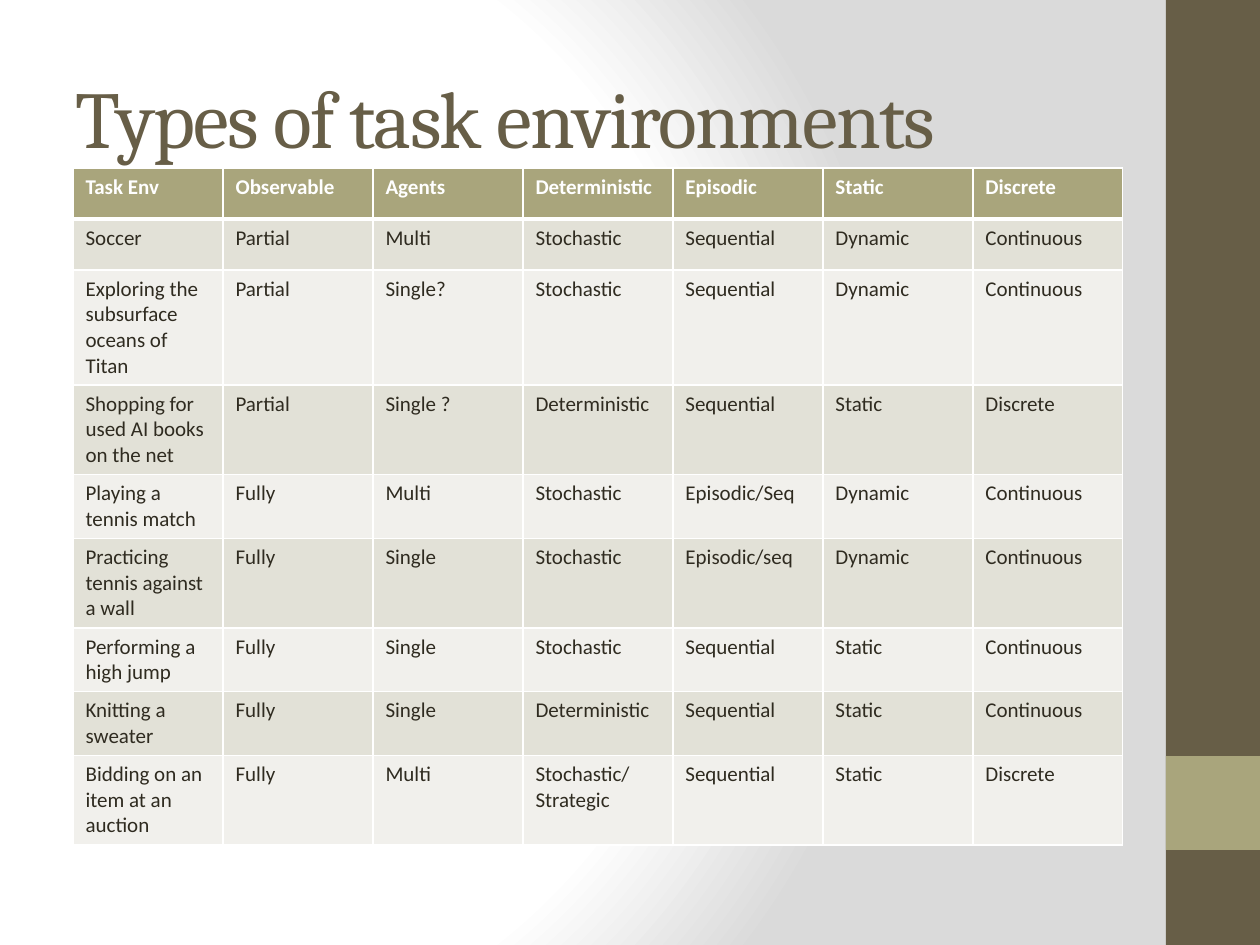
from dataclasses import dataclass

from lxml.etree import SubElement
from pptx import Presentation
from pptx.dml.color import RGBColor
from pptx.enum.shapes import MSO_SHAPE
from pptx.enum.text import MSO_ANCHOR, MSO_AUTO_SIZE, PP_ALIGN
from pptx.oxml import parse_xml
from pptx.oxml.ns import nsdecls, qn
from pptx.util import Pt

TITLE = "Types of task environments"
HEADER = ("Task Env", "Observable", "Agents", "Deterministic", "Episodic", "Static", "Discrete")
ENVIRONMENTS = [
    ("Soccer", "Partial", "Multi", "Stochastic", "Sequential", "Dynamic", "Continuous"),
    ("Exploring the subsurface oceans of Titan", "Partial", "Single?", "Stochastic",
     "Sequential", "Dynamic", "Continuous"),
    ("Shopping for used AI books on the net", "Partial", "Single ?", "Deterministic",
     "Sequential", "Static", "Discrete"),
    ("Playing a tennis match", "Fully", "Multi", "Stochastic", "Episodic/Seq", "Dynamic",
     "Continuous"),
    ("Practicing tennis against a wall", "Fully", "Single", "Stochastic", "Episodic/seq",
     "Dynamic", "Continuous"),
    ("Performing a high jump", "Fully", "Single", "Stochastic", "Sequential", "Static",
     "Continuous"),
    ("Knitting a sweater", "Fully", "Single", "Deterministic", "Sequential", "Static",
     "Continuous"),
    ("Bidding on an item at an auction", "Fully", "Multi", "Stochastic/\nStrategic",
     "Sequential", "Static", "Discrete"),
]

PX = 914400 // 126
SLIDE_SIZE = (1260, 945)
TITLE_BOX = (63, 38, 1050, 157)
TABLE_ORIGIN = (73, 168)
COLUMN_WIDTH, ROW_HEIGHT = 150, 51
SIDEBAR_LEFT, SIDEBAR_WIDTH, ACCENT_TOP = 1166, 94, 756


@dataclass(frozen=True)
class Theme:
    brown: str = "675E47"
    olive: str = "A9A57C"
    ink: str = "2F2B20"
    white: str = "FFFFFF"
    grey: str = "DADADA"
    bands: tuple = ("E2E1D7", "F1F0EC")
    heading_font: str = "Cambria"
    body_font: str = "Calibri"
    title_size: int = 46
    table_size: int = 12
    thin: int = 1
    thick: int = 3


THEME = Theme()


def emu(*lengths):
    return [length * PX for length in lengths]


def write(frame, text, *, size, color, font, bold=False, spacing=None):
    frame.text = text
    for paragraph in frame.paragraphs:
        paragraph.alignment = PP_ALIGN.LEFT
        for run in paragraph.runs:
            run.font.size = Pt(size)
            run.font.name = font
            run.font.bold = bold
            run.font.color.rgb = RGBColor.from_string(color)
            if spacing is not None:
                run.font._element.set("spc", str(spacing * 100))


def paint_background(slide):
    stops = "".join(
        f'<a:gs pos="{position * 1000}"><a:srgbClr val="{color}"/></a:gs>'
        for position, color in ((0, THEME.white), (75, THEME.white), (100, THEME.grey))
    )
    slide.element.cSld.insert(0, parse_xml(
        f'<p:bg {nsdecls("p", "a")}><p:bgPr><a:gradFill rotWithShape="1">'
        f'<a:gsLst>{stops}</a:gsLst><a:path path="circle">'
        '<a:fillToRect l="20000" t="50000" r="100000" b="50000"/></a:path>'
        '</a:gradFill><a:effectLst/></p:bgPr></p:bg>'
    ))


def add_bar(slide, top, height, color):
    bar = slide.shapes.add_shape(
        MSO_SHAPE.RECTANGLE, *emu(SIDEBAR_LEFT, top, SIDEBAR_WIDTH, height))
    bar.shadow.inherit = False
    bar.fill.solid()
    bar.fill.fore_color.rgb = RGBColor.from_string(color)
    bar.line.fill.background()
    slide.shapes._spTree.insert_element_before(bar._element, "p:sp")


def set_borders(cell, top, bottom):
    properties = cell._tc.get_or_add_tcPr()
    widths = {"lnL": THEME.thin, "lnR": THEME.thin, "lnT": top, "lnB": bottom}
    for side, width in widths.items():
        border = SubElement(properties, qn(f"a:{side}"), w=str(Pt(width)))
        solid = SubElement(border, qn("a:solidFill"))
        SubElement(solid, qn("a:srgbClr"), val=THEME.white)


def add_environment_table(slide):
    rows = [HEADER, *ENVIRONMENTS]
    size = (COLUMN_WIDTH * len(HEADER), ROW_HEIGHT * len(rows))
    table = slide.shapes.add_table(
        len(rows), len(HEADER), *emu(*TABLE_ORIGIN, *size)).table
    for column in table.columns:
        column.width = COLUMN_WIDTH * PX
    for row_index, values in enumerate(rows):
        table.rows[row_index].height = ROW_HEIGHT * PX
        heading = row_index == 0
        fill = THEME.olive if heading else THEME.bands[(row_index - 1) % 2]
        for column_index, value in enumerate(values):
            cell = table.cell(row_index, column_index)
            set_borders(cell, THEME.thick if row_index == 1 else THEME.thin,
                        THEME.thick if heading else THEME.thin)
            cell.fill.solid()
            cell.fill.fore_color.rgb = RGBColor.from_string(fill)
            write(cell.text_frame, value, size=THEME.table_size, font=THEME.body_font,
                  color=THEME.white if heading else THEME.ink, bold=heading)


def main():
    presentation = Presentation()
    presentation.slide_width, presentation.slide_height = emu(*SLIDE_SIZE)
    slide = presentation.slides.add_slide(presentation.slide_layouts[5])
    paint_background(slide)

    title = slide.shapes.title
    title.left, title.top, title.width, title.height = emu(*TITLE_BOX)
    title.text_frame.word_wrap = True
    title.text_frame.auto_size = MSO_AUTO_SIZE.NONE
    title.text_frame.vertical_anchor = MSO_ANCHOR.MIDDLE
    write(title.text_frame, TITLE, size=THEME.title_size, color=THEME.brown,
          font=THEME.heading_font, spacing=-1)

    add_bar(slide, ACCENT_TOP, SIDEBAR_WIDTH, THEME.olive)
    add_bar(slide, 0, SLIDE_SIZE[1], THEME.brown)
    add_environment_table(slide)
    presentation.save("out.pptx")


if __name__ == "__main__":
    main()
